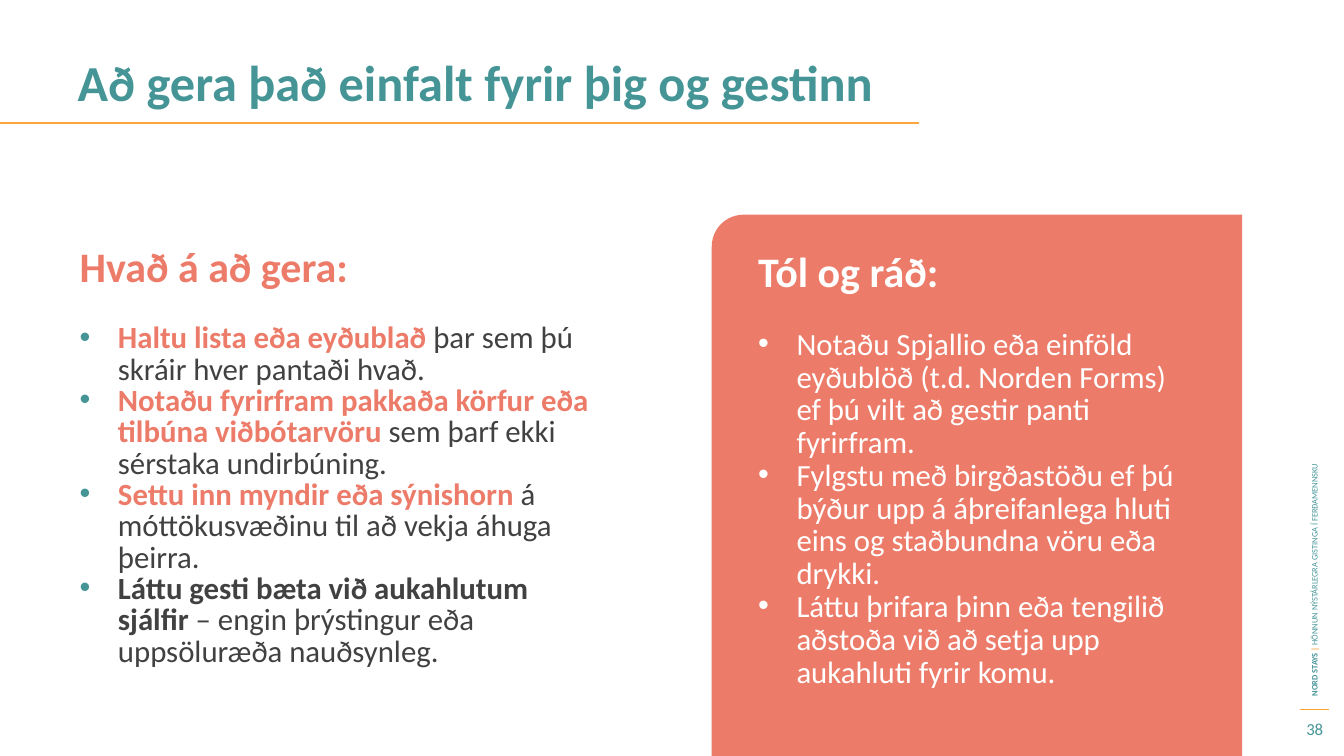
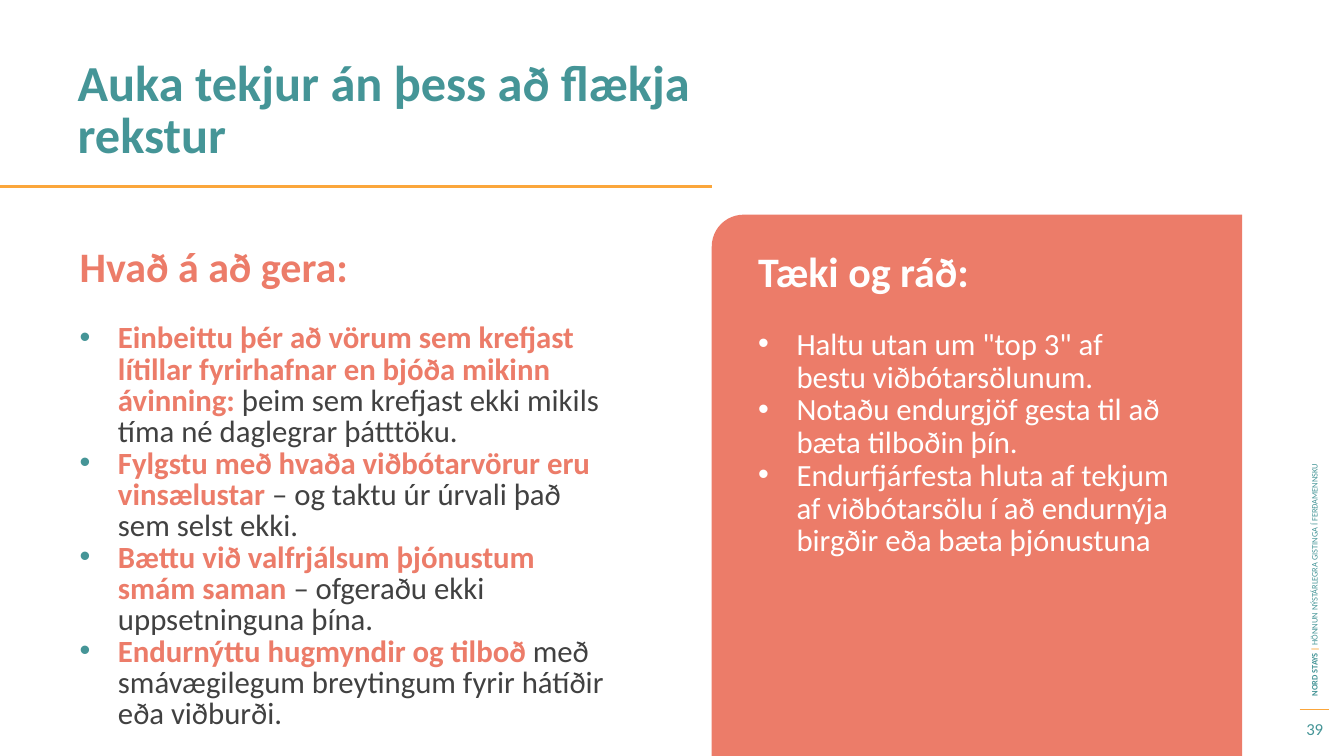
from lxml import etree
from pptx import Presentation, util as u
from pptx.dml import color
from pptx.enum import shapes, text
from pptx.oxml import ns

COLORS = {"teal": "459597", "amber": "FBA63B", "coral": "EC7C69", "ink": "414141", "white": "FFFFFF"}
FONT = "Calibri"
FRAME = {"word_wrap": True, "auto_size": text.MSO_AUTO_SIZE.NONE, "vertical_anchor": text.MSO_ANCHOR.TOP}
TITLE = {"size": 36, "color": "teal", "bold": True, "spacing": 37.2}
LEFT_HEADING = {"size": 30, "color": "coral", "bold": True, "spacing": 29}
CARD_HEADING = {"size": 30, "color": "white", "bold": True, "spacing": 23.4}
LEFT_LIST = {"size": 22, "color": "ink", "spacing": 22.4, "bullet": "teal"}
CARD_LIST = {"size": 22, "color": "white", "spacing": 23.4, "bullet": "white"}
FOOTER = {"size": 6, "color": "teal"}
PAGE_NUMBER = {"size": 12, "color": "teal", "align": text.PP_ALIGN.CENTER}

SLIDES = [
    {
        "number": 38,
        "title": "Að gera það einfalt fyrir þig og gestinn",
        "title_width": 12,
        "rule": (9.11, 1.22),
        "steps": [
            ("Haltu lista eða eyðublað ", "coral", "þar sem þú skráir hver pantaði hvað."),
            ("Notaðu fyrirfram pakkaða körfur eða tilbúna viðbótarvöru ", "coral",
             "sem þarf ekki sérstaka undirbúning."),
            ("Settu inn myndir eða sýnishorn ", "coral",
             "á móttökusvæðinu til að vekja áhuga þeirra."),
            ("Láttu gesti bæta við aukahlutum sjálfir ", "ink",
             "– engin þrýstingur eða uppsöluræða nauðsynleg."),
        ],
        "card_heading": "Tól og ráð:",
        "card_width": 4.54,
        "tips": [
            "Notaðu Spjallio eða einföld eyðublöð (t.d. Norden Forms) ef þú vilt að gestir panti fyrirfram.",
            "Fylgstu með birgðastöðu ef þú býður upp á áþreifanlega hluti eins og staðbundna vöru eða drykki.",
            "Láttu þrifara þinn eða tengilið aðstoða við að setja upp aukahluti fyrir komu.",
        ],
    },
    {
        "number": 39,
        "title": "Auka tekjur án þess að flækja rekstur",
        "title_width": 7.48,
        "rule": (7.06, 1.85),
        "steps": [
            ("Einbeittu þér að vörum sem krefjast lítillar fyrirhafnar en bjóða mikinn ávinning: ", "coral",
             "þeim sem krefjast ekki mikils tíma né daglegrar þátttöku."),
            ("Fylgstu með hvaða viðbótarvörur eru vinsælustar ", "coral",
             "– og taktu úr úrvali það sem selst ekki."),
            ("Bættu við valfrjálsum þjónustum smám saman ", "coral",
             "– ofgeraðu ekki uppsetninguna þína."),
            ("Endurnýttu hugmyndir og tilboð ", "coral",
             "með smávægilegum breytingum fyrir hátíðir eða viðburði."),
        ],
        "card_heading": "Tæki og ráð:",
        "card_width": 4.33,
        "tips": [
            'Haltu utan um "top 3" af bestu viðbótarsölunum.',
            "Notaðu endurgjöf gesta til að bæta tilboðin þín.",
            "Endurfjárfesta hluta af tekjum af viðbótarsölu í að endurnýja birgðir eða bæta þjónustuna",
        ],
    },
]


def rgb(name):
    """Return the palette colour of that name."""
    return color.RGBColor.from_string(COLORS[name])


def apply(target, values):
    """Set every value of a dict as an attribute of the target."""
    for key, value in values.items():
        setattr(target, key, value)


def place(shape, box):
    """Move a shape to a box of left, top, width and height in inches."""
    apply(shape, dict(zip(("left", "top", "width", "height"), map(u.Inches, box))))


def add_bullet(paragraph, color_name):
    """Give a paragraph a coloured bullet with a hanging indent."""
    properties = paragraph._p.get_or_add_pPr()
    indent = u.Inches(0.38)
    properties.set("marL", str(indent))
    properties.set("indent", str(-indent))
    bullet_color = etree.SubElement(properties, ns.qn("a:buClr"))
    etree.SubElement(bullet_color, ns.qn("a:srgbClr"), val=COLORS[color_name])
    etree.SubElement(properties, ns.qn("a:buFont"), typeface="Arial")
    etree.SubElement(properties, ns.qn("a:buChar"), char="•")


def write(shape, box, paragraphs, style, **frame):
    """Fill a shape with paragraphs, each a list of (words, run format) pairs."""
    place(shape, box)
    apply(shape.text_frame, {**FRAME, **frame})
    for index, runs in enumerate(paragraphs):
        paragraph = shape.text_frame.add_paragraph() if index else shape.text_frame.paragraphs[0]
        if "bullet" in style:
            add_bullet(paragraph, style["bullet"])
        spacing = u.Pt(style["spacing"]) if "spacing" in style else 1.0
        apply(paragraph, {"alignment": style.get("align", text.PP_ALIGN.LEFT),
                          "line_spacing": spacing, "space_before": u.Pt(0)})
        for words, changes in runs:
            look = {**style, **changes}
            run = paragraph.add_run()
            run.text = words
            apply(run.font, {"name": FONT, "size": u.Pt(look["size"]), "bold": look.get("bold", False)})
            run.font.color.rgb = rgb(look["color"])


def add_rule(slide, start, end, weight):
    """Draw a straight amber line between two points in inches."""
    rule = slide.shapes.add_connector(shapes.MSO_CONNECTOR.STRAIGHT, *map(u.Inches, (*start, *end)))
    rule.line.color.rgb = rgb("amber")
    rule.line.width = u.Pt(weight)
    etree.SubElement(rule._element.spPr, ns.qn("a:effectLst"))


def add_header(slide, content):
    """Place the title and the rule that runs in from the slide edge."""
    write(slide.shapes.title, (0.67, 0.54, content["title_width"], 0.88), [[(content["title"], {})]], TITLE)
    end, top = content["rule"]
    add_rule(slide, (0, top), (end, top), 1.5)


def add_steps(slide, box, steps):
    """Place the left heading with its list of steps."""
    left, top, width, height = box
    heading, body = slide.placeholders[1], slide.placeholders[2]
    write(heading, (left, top, width, 0.88), [[("Hvað á að gera:", {})]], LEFT_HEADING)
    items = [[(lead, {"color": lead_color, "bold": True}), (rest, {})] for lead, lead_color, rest in steps]
    write(body, (left, top + 0.73, width, height - 0.73), items, LEFT_LIST)


def add_card(slide, box, heading, tips, text_width):
    """Place the coral card with one round corner, its heading and its tips."""
    left, top, width, height = box
    card = slide.shapes.add_shape(shapes.MSO_SHAPE.ROUND_1_RECTANGLE, *map(u.Inches, box))
    card._element.spPr.xfrm.set("flipH", "1")
    card.adjustments[0] = 0.06
    card.shadow.inherit = False
    card.fill.solid()
    card.fill.fore_color.rgb = rgb("coral")
    card.line.fill.background()
    slide.shapes._spTree.insert(2, card._element)
    text_left, text_top = left + 0.36, top + 0.43
    write(slide.placeholders[3], (text_left, text_top, text_width, 0.65), [[(heading, {})]], CARD_HEADING)
    write(slide.placeholders[4], (text_left, text_top + 0.65, text_width, 2.94),
          [[(tip, {})] for tip in tips], CARD_LIST)


def add_footer(slide, number):
    """Place the upright project line and the page number under its rule."""
    add_rule(slide, (12.89, 7.04), (13.18, 7.04), 0.75)
    project = slide.shapes.add_textbox(0, 0, 0, 0)
    runs = [("NORD STAYS ", {"bold": True}), ("| ", {"bold": True, "color": "amber"}),
            ("HÖNNUN NÝSTÁRLEGRA GISTINGA Í FERÐAMENNSKU", {})]
    write(project, (10.15, 4.02, 5.77, 0.2), [runs], FOOTER, vertical_anchor=text.MSO_ANCHOR.MIDDLE)
    project.rotation = 270
    page = slide.shapes.add_textbox(0, 0, 0, 0)
    write(page, (12.78, 7.06, 0.52, 0.34), [[(str(number), {})]], PAGE_NUMBER,
          vertical_anchor=text.MSO_ANCHOR.MIDDLE)


def build_slide(deck, content):
    """Add one slide with steps on the left and a tips card on the right."""
    slide = deck.slides.add_slide(deck.slide_layouts.get_by_name("Comparison"))
    add_header(slide, content)
    add_steps(slide, (0.69, 2.43, 5.41, 4.73), content["steps"])
    add_card(slide, (7.06, 2.13, 5.26, 5.37), content["card_heading"], content["tips"], content["card_width"])
    add_footer(slide, content["number"])


def main():
    """Build the deck and save it."""
    deck = Presentation()
    apply(deck, {"slide_width": u.Inches(13.33), "slide_height": u.Inches(7.5)})
    for content in SLIDES:
        build_slide(deck, content)
    deck.save("out.pptx")


if __name__ == "__main__":
    main()
